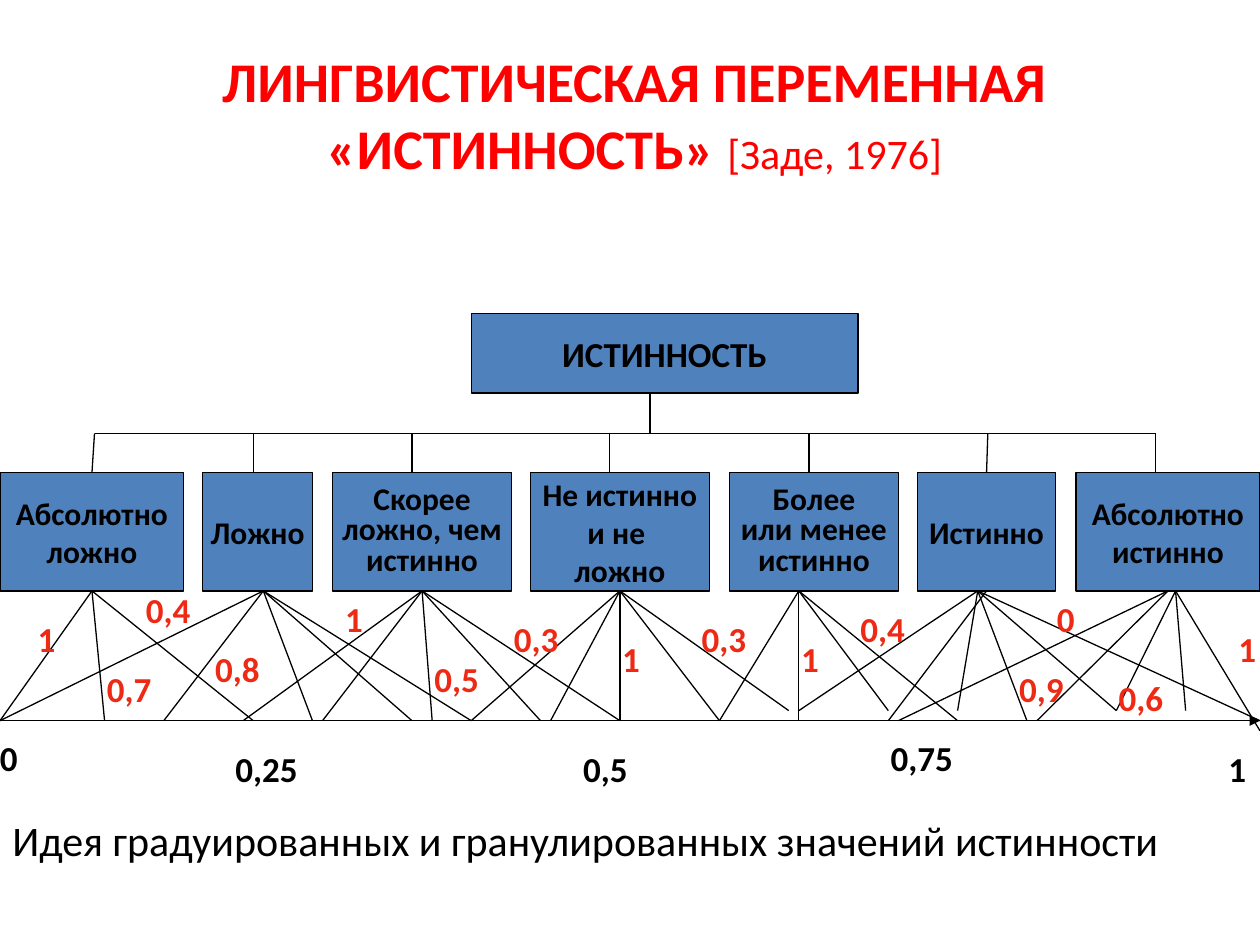
from lxml.etree import SubElement
from pptx import Presentation
from pptx.dml.color import RGBColor
from pptx.enum.shapes import MSO_CONNECTOR, MSO_SHAPE
from pptx.enum.text import MSO_ANCHOR, PP_ALIGN
from pptx.oxml.ns import qn
from pptx.util import Inches, Pt

BLACK, RED, LABEL_RED, BLUE = "000000", "FF0000", "EE2914", "4F81BD"
BOX_TOP, BOX_HEIGHT = 3.75, 0.94
BOX_BOTTOM = BOX_TOP + BOX_HEIGHT
BUS, AXIS, SHORT = 3.44, 5.72, 5.64

presentation = Presentation()
presentation.slide_width, presentation.slide_height = Inches(10), Inches(7.5)
slide = presentation.slides.add_slide(presentation.slide_layouts[6])


def format_text(shape, size, color, bold=True, align=PP_ALIGN.LEFT):
    for paragraph in shape.text_frame.paragraphs:
        paragraph.alignment = align
        for run in paragraph.runs:
            run.font.name = "Calibri"
            run.font.size = Pt(size)
            run.font.bold = bold
            run.font.color.rgb = RGBColor.from_string(color)


def add_line(x1, y1, x2, y2):
    connector = slide.shapes.add_connector(
        MSO_CONNECTOR.STRAIGHT, Inches(x1), Inches(y1), Inches(x2), Inches(y2))
    connector.line.color.rgb = RGBColor.from_string(BLACK)
    connector.line.width = Pt(0.75)
    SubElement(connector._element.spPr, qn("a:effectLst"))
    return connector


# Title
title = slide.shapes.add_textbox(Inches(0.5), Inches(0.25), Inches(9.07), Inches(1.3))
title.text_frame.word_wrap = True
title.text_frame.vertical_anchor = MSO_ANCHOR.MIDDLE
title.text_frame.text = "ЛИНГВИСТИЧЕСКАЯ ПЕРЕМЕННАЯ «ИСТИННОСТЬ» "
citation = title.text_frame.paragraphs[0].add_run()
citation.text = "[Заде, 1976]"
format_text(title, 32, RED, align=PP_ALIGN.CENTER)
citation.font.size = Pt(24)
citation.font.bold = False

# Root and term boxes: left, top, width, height, size, line spacing, text
boxes = [
    (3.74, 2.49, 3.07, 0.63, 20, 1, "ИСТИННОСТЬ"),
    *[(left, BOX_TOP, width, BOX_HEIGHT, 18, spacing, text)
      for left, width, spacing, text in [
          (0, 1.46, 1, "Абсолютно\nложно"),
          (1.61, 0.87, 1, "Ложно"),
          (2.64, 1.42, 0.8, "Скорее\nложно, чем\nистинно"),
          (4.21, 1.42, 1, "Не истинно\nи не \nложно"),
          (5.79, 1.34, 0.8, "Более\nили менее\nистинно"),
          (7.28, 1.1, 1, "Истинно"),
          (8.54, 1.46, 1, "Абсолютно\nистинно")]],
]
terms = []
for left, top, width, height, size, spacing, text in boxes:
    box = slide.shapes.add_shape(
        MSO_SHAPE.RECTANGLE, Inches(left), Inches(top), Inches(width), Inches(height))
    box.shadow.inherit = False
    box.fill.solid()
    box.fill.fore_color.rgb = RGBColor.from_string(BLUE)
    box.line.color.rgb = RGBColor.from_string(BLACK)
    box.line.width = Pt(0.75)
    box.text_frame.word_wrap = False
    box.text_frame.vertical_anchor = MSO_ANCHOR.MIDDLE
    box.text_frame.text = text
    format_text(box, size, BLACK, align=PP_ALIGN.CENTER)
    for paragraph in box.text_frame.paragraphs:
        paragraph.line_spacing = float(spacing)
    terms.append((left + width / 2, box))
terms = terms[1:]

# Tree: trunk, bus and one drop per term
add_line(5.16, 3.12, 5.16, BUS)
add_line(0.75, BUS, 9.17, BUS)
for x, (center, box) in zip([0.75, 2.01, 3.27, 4.84, 6.42, 7.84, 9.17], terms):
    drop = add_line(x, BUS, x, BOX_TOP)
    if abs(x - center) < 0.03:
        drop.end_connect(box, 0)

# Truth axis
axis = add_line(0, AXIS, 10, AXIS)
SubElement(axis.line._get_or_add_ln(), qn("a:tailEnd"), type="triangle")

# Fans from each term: term index, apex x, end points on or just above the axis
fans = [
    (0, 0.75, [(0, AXIS), (0.83, AXIS), (2.01, AXIS)]),
    (1, 2.09, [(0, AXIS), (1.3, AXIS), (2.48, AXIS), (3.27, AXIS), (3.74, AXIS)]),
    (2, 3.35, [(1.93, AXIS), (2.56, AXIS), (3.43, AXIS), (4.29, AXIS), (4.92, AXIS)]),
    (3, 4.92, [(3.74, AXIS), (4.37, AXIS), (4.92, AXIS), (5.71, AXIS), (6.26, SHORT)]),
    (4, 6.34, [(5.71, AXIS), (6.34, AXIS), (7.05, SHORT), (7.6, AXIS)]),
    (5, 7.76, [(6.34, SHORT), (7.6, SHORT), (8.15, AXIS), (8.86, SHORT), (10, AXIS)]),
    (5, 7.84, [(7.05, AXIS)]),
    (6, 9.25, [(7.13, AXIS), (8.23, AXIS)]),
    (6, 9.33, [(8.86, SHORT), (9.41, SHORT), (10, 5.8)]),
]
for index, apex, ends in fans:
    center, box = terms[index]
    for x, y in ends:
        ray = add_line(apex, BOX_BOTTOM, x, y)
        if abs(apex - center) < 0.03:
            ray.begin_connect(box, 2)

# Axis values and membership grades: left, top, width, text
axis_values = [(-0.1, 5.8, 0.45, "0"), (1.77, 5.88, 0.87, "0,25"), (4.53, 5.88, 0.63, "0,5"),
               (6.97, 5.8, 0.79, "0,75"), (9.65, 5.88, 0.35, "1")]
grades = [
    (0.2, 4.85, 0.39, "1"), (1.06, 4.62, 0.63, "0,4"), (0.75, 5.25, 0.71, "0,7"),
    (1.61, 5.09, 0.71, "0,8"), (2.64, 4.69, 0.32, "1"), (3.35, 5.17, 0.63, "0,5"),
    (3.98, 4.85, 0.71, "0,3"), (4.84, 5.01, 0.34, "1"), (5.47, 4.85, 0.63, "0,3"),
    (6.26, 5.01, 0.32, "1"), (6.73, 4.77, 0.63, "0,4"), (7.99, 5.25, 0.79, "0,9"),
    (8.29, 4.69, 0.38, "0"), (8.78, 5.32, 0.63, "0,6"), (9.73, 4.93, 0.28, "1"),
]
for labels, color in [(axis_values, BLACK), (grades, LABEL_RED)]:
    for left, top, width, text in labels:
        label = slide.shapes.add_textbox(
            Inches(left), Inches(top), Inches(width), Inches(0.43))
        label.text_frame.word_wrap = True
        label.text_frame.text = text
        format_text(label, 20, color)

# Closing remark
remark = slide.shapes.add_textbox(Inches(0), Inches(6.59), Inches(10), Inches(0.3))
remark.text_frame.word_wrap = True
remark.text_frame.text = "Идея градуированных и гранулированных значений истинности"
remark.text_frame.paragraphs[0].line_spacing = 0.5
format_text(remark, 24, BLACK, bold=False)

presentation.save("out.pptx")
